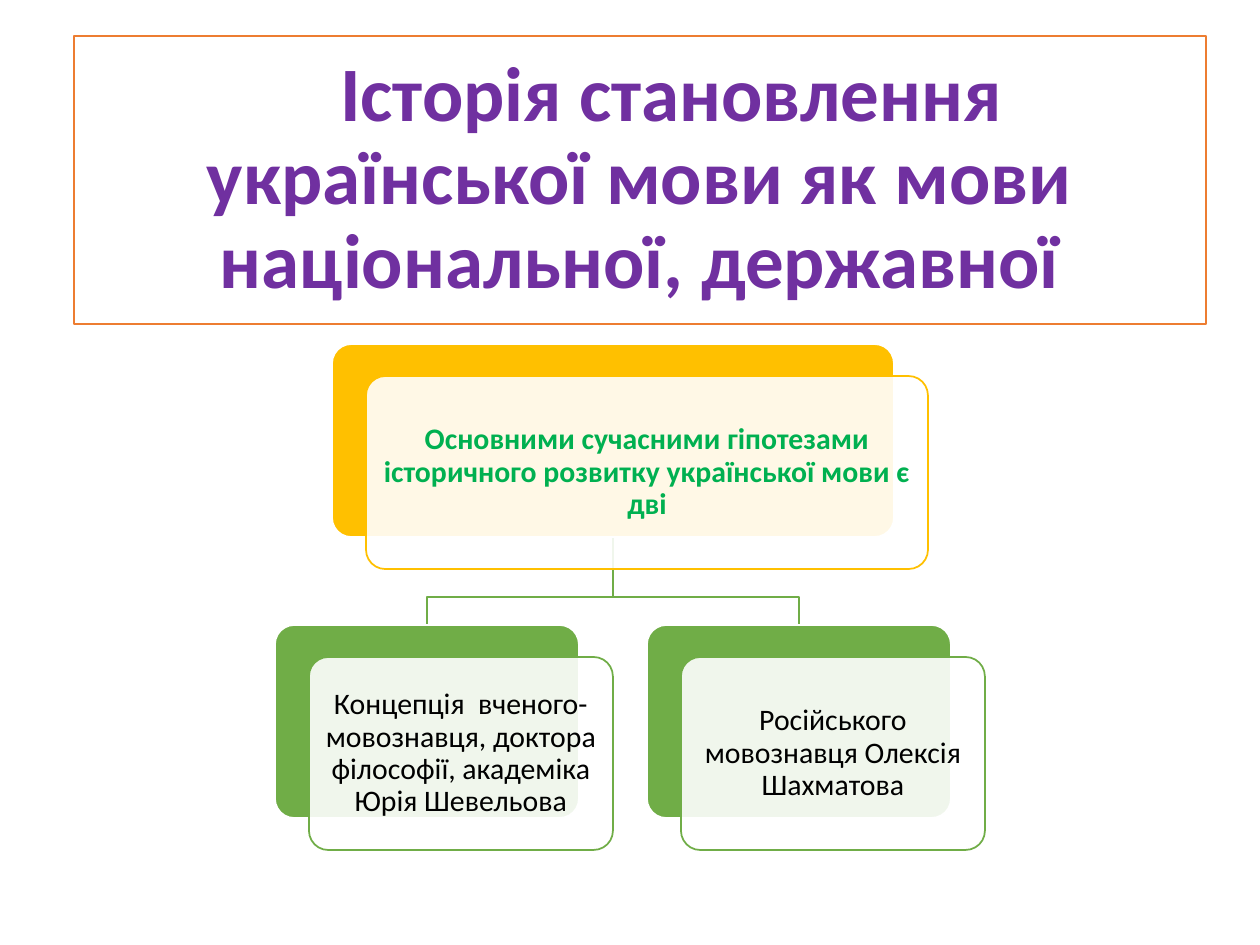
from lxml import etree
from pptx import Presentation
from pptx.dml.color import RGBColor
from pptx.enum.shapes import MSO_SHAPE
from pptx.enum.text import MSO_ANCHOR, PP_ALIGN
from pptx.oxml.ns import qn
from pptx.util import Pt

RECTANGLE = MSO_SHAPE.RECTANGLE
ROUNDED = MSO_SHAPE.ROUNDED_RECTANGLE
MIDDLE = MSO_ANCHOR.MIDDLE
CENTER = PP_ALIGN.CENTER

WHITE = RGBColor(0xFF, 0xFF, 0xFF)
BLACK = RGBColor(0, 0, 0)
ORANGE = RGBColor(0xED, 0x7D, 0x31)
PURPLE = RGBColor(0x70, 0x30, 0xA0)
GOLD = RGBColor(0xFF, 0xC0, 0x00)
LEAF = RGBColor(0x70, 0xAD, 0x47)
GREEN = RGBColor(0x00, 0xB0, 0x50)

TITLE = "Історія становлення української мови як мови національної, державної"
ROOT = "Основними сучасними гіпотезами історичного розвитку української мови є дві"
BRANCHES = [
    "Концепція  вченого-мовознавця, доктора філософії, академіка Юрія Шевельова",
    "Російського мовознавця Олексія Шахматова",
]

EMU_PER_PX = 914400 / 126
TITLE_BOX = (74, 36, 1132, 288)
TREE_CENTER = 613
ROOT_TOP, ROOT_WIDTH = 344, 562
BRANCH_TOP, BRANCH_WIDTH, BRANCH_PITCH = 625, 304, 372
CARD_HEIGHT = 193
CARD_SHIFT = (34, 32)
ELBOW_Y = 597
CARD_INSET = 9


def px(length):
    return round(length * EMU_PER_PX)


def add_box(page, preset, bounds, fill, line):
    box = page.shapes.add_shape(preset, *map(px, bounds))
    box.shadow.inherit = False
    box.fill.solid()
    box.fill.fore_color.rgb = fill
    box.line.color.rgb = line
    box.line.width = Pt(1)
    return box


def write(box, spans, size):
    """Fill the box with one centred paragraph of (text, colour, bold) spans."""
    frame = box.text_frame
    frame.word_wrap = True
    frame.vertical_anchor = MIDDLE
    para = frame.paragraphs[0]
    para.alignment = CENTER
    para.line_spacing = 0.9
    for text, color, bold in spans:
        span = para.add_run()
        span.text = text
        span.font.name = "Calibri"
        span.font.size = Pt(size)
        span.font.bold = bold
        span.font.color.rgb = color


def add_card(page, center, top, width, accent, span):
    """Draw a solid back plate and, shifted over it, a translucent text plate."""
    left = center - width / 2
    dx, dy = CARD_SHIFT
    back = add_box(page, ROUNDED, (left, top, width, CARD_HEIGHT), accent, WHITE)
    front = add_box(page, ROUNDED, (left + dx, top + dy, width, CARD_HEIGHT), WHITE, accent)
    for plate in (back, front):
        plate.adjustments[0] = 0.1
    color = front.fill._xPr.find(qn("a:solidFill"))[0]
    etree.SubElement(color, qn("a:alpha"), val="90000")
    frame = front.text_frame
    frame.margin_left = frame.margin_right = px(CARD_INSET)
    frame.margin_top = frame.margin_bottom = px(CARD_INSET)
    write(front, [span], 17)


def add_branch_line(page, end_x):
    builder = page.shapes.build_freeform(TREE_CENTER, ROOT_TOP + CARD_HEIGHT, EMU_PER_PX)
    bends = [(TREE_CENTER, ELBOW_Y), (end_x, ELBOW_Y), (end_x, BRANCH_TOP)]
    builder.add_line_segments(bends, close=False)
    line = builder.convert_to_shape()
    line.shadow.inherit = False
    line.fill.background()
    line.line.color.rgb = LEAF
    line.line.width = Pt(1)


def main():
    deck = Presentation()
    deck.slide_width, deck.slide_height = px(1260), px(945)
    page = deck.slides.add_slide(deck.slide_layouts[6])

    title = add_box(page, RECTANGLE, TITLE_BOX, WHITE, ORANGE)
    write(title, [("\t", BLACK, False), (TITLE, PURPLE, True)], 44)

    first = TREE_CENTER - BRANCH_PITCH * (len(BRANCHES) - 1) / 2
    centers = [first + i * BRANCH_PITCH for i in range(len(BRANCHES))]
    for center in centers:
        add_branch_line(page, center)
    add_card(page, TREE_CENTER, ROOT_TOP, ROOT_WIDTH, GOLD, (ROOT, GREEN, True))
    for center, text in zip(centers, BRANCHES):
        add_card(page, center, BRANCH_TOP, BRANCH_WIDTH, LEAF, (text, BLACK, False))

    deck.save("out.pptx")


if __name__ == "__main__":
    main()
